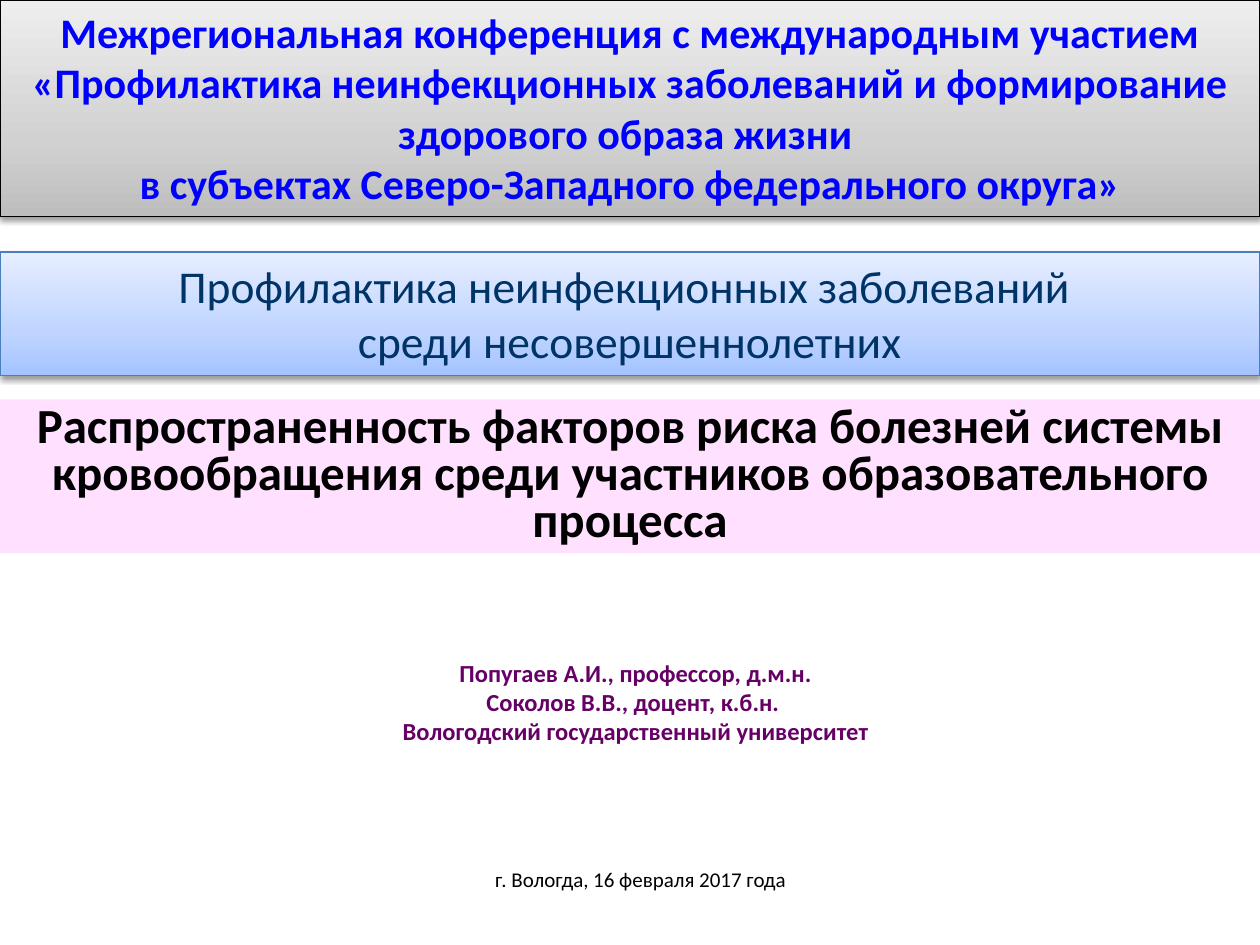
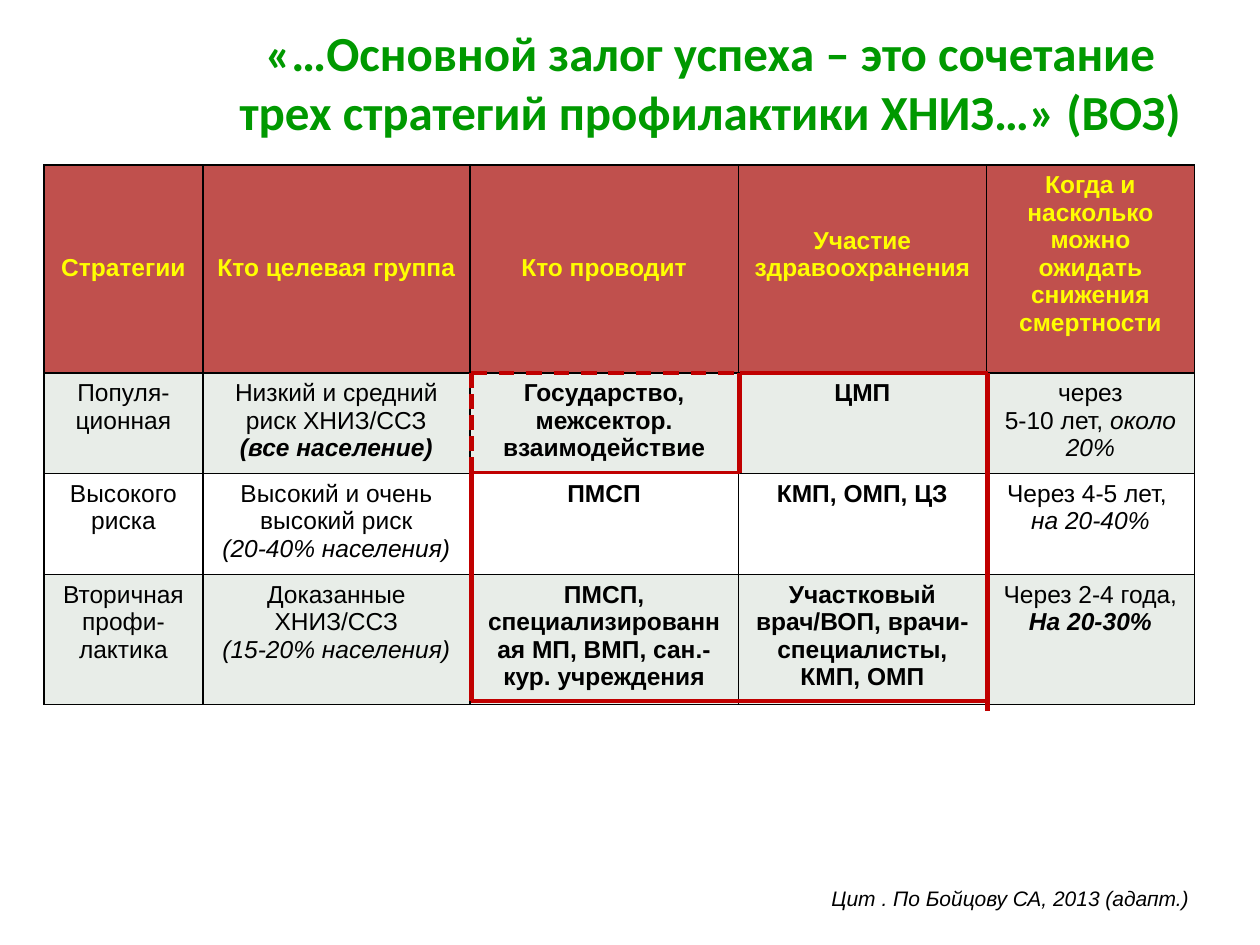
from dataclasses import dataclass
from pptx import Presentation
from pptx.dml.color import RGBColor
from pptx.enum.dml import MSO_LINE
from pptx.enum.shapes import MSO_CONNECTOR, MSO_SHAPE
from pptx.enum.text import MSO_ANCHOR, MSO_AUTO_SIZE, PP_ALIGN
from pptx.oxml import parse_xml
from pptx.oxml.ns import nsdecls, qn
from pptx.util import Inches, Pt

LEFT, CENTER = PP_ALIGN.LEFT, PP_ALIGN.CENTER
TOP, MIDDLE = MSO_ANCHOR.TOP, MSO_ANCHOR.MIDDLE
RECT, LINE = MSO_SHAPE.RECTANGLE, MSO_CONNECTOR.STRAIGHT
DASH, DOTS = MSO_LINE.DASH, MSO_LINE.SQUARE_DOT
FIXED = MSO_AUTO_SIZE.NONE


@dataclass(frozen=True)
class Font:
    size: float
    color: str
    face: str = "Calibri"
    style: str = ""


class Theme:
    event = Font(24, "0000FF", style="b")
    topic = Font(26, "003366")
    title = Font(28, "000000", style="b")
    quote = Font(28, "009900", style="b")
    author = Font(14, "660066", style="b")
    date = Font(12, "000000")
    head = Font(14, "FFFF00", "Arial", "b")
    cell = Font(14, "000000", "Arial")
    source = Font(12, "000000", "Arial", "i")
    gray = ("BDBDBD", "D1D1D1", "EEEEEE")
    blue = ("A4C4FF", "BFD4FF", "E6EEFF")
    black, sky, pink = "000000", "4B7EBC", "FFE1FF"
    brick, red = "C0504D", "C00000"
    bands = ("E8EDE8", "FFFFFF")


BANDS = [
    ((0, 0, 10, 1.72), Theme.gray, Theme.black, Theme.event, [
        "Межрегиональная конференция с международным участием "
        "«Профилактика неинфекционных заболеваний и формирование "
        "здорового образа жизни ",
        "в субъектах Северо-Западного федерального округа»"]),
    ((0, 2, 10, 0.98), Theme.blue, Theme.sky, Theme.topic, [
        "Профилактика неинфекционных заболеваний \nсреди несовершеннолетних"]),
]
TITLE = ["Распространенность факторов риска болезней системы "
         "кровообращения среди участников образовательного процесса"]
AUTHORS = ["Попугаев А.И., профессор, д.м.н.",
           "Соколов В.В., доцент, к.б.н. ",
           "Вологодский государственный университет"]
DATE = ["г. Вологда, 16 февраля 2017 года"]

QUOTE = [" «…Основной залог успеха – это сочетание ",
         "трех стратегий профилактики ХНИЗ…» (ВОЗ)"]
SOURCE = ["Цит . По Бойцову СА, 2013 (адапт.)"]
COLS = [1.26, 2.12, 2.13, 1.97, 1.65]
ROWS = [1.65, 0.8, 0.8, 1.03]
HEAD = [("Стратегии", 3), ("Кто целевая группа", 3), ("Кто проводит", 3),
        ("Участие здравоохранения", 2),
        ("Когда и насколько можно ожидать снижения смертности", 0)]
CELLS = [
    [["Популя-ционная"],
     ["Низкий и средний риск ХНИЗ/ССЗ", [("(все население)", "bi")]],
     [[("Государство, межсектор. взаимодействие", "b")]],
     [[("ЦМП", "b")]],
     ["через", [("5-10 лет, ", ""), ("около 20%", "i")]]],
    [["Высокого риска"],
     ["Высокий и очень высокий риск", [("(20-40% населения)", "i")]],
     [[("ПМСП", "b")]],
     [[("КМП, ОМП, ЦЗ", "b")]],
     ["Через 4-5 лет, ", [("на 20-40%", "i")]]],
    [["Вторичная профи-", "лактика"],
     ["Доказанные ХНИЗ/ССЗ", [("(15-20% населения)", "i")]],
     [[("ПМСП, специализированная МП, ВМП, сан.-кур. учреждения", "b")]],
     [[("Участковый врач/ВОП, врачи-специалисты, КМП, ОМП", "b")]],
     ["Через 2-4 года,", [("На 20-30%", "bi")]]],
]
X1, X2, X3 = 3.74, 5.87, 7.84
Y1, Y2, Y3, END = 2.96, 3.75, 5.56, 5.64
FRAME = [
    (X1, Y3, X1, Y2, 3, None),
    (X3, END, X3, Y1, 3, None),
    (X1, Y3, X3, Y3, 2.25, None),
    (X2, Y1, X3, Y1, 2.25, None),
    (X1, Y2, X2, Y2, 2.25, None),
    (X1, Y1, X2, Y1, 2.25, DASH),
    (X1, Y2, X1, Y1, 3, DOTS),
    (X2, Y2, X2, Y1, 3, None),
]


def rgb(code):
    return RGBColor.from_string(code)


def write(frame, paras, font, align=CENTER, space=None):
    for n, para in enumerate(paras):
        p = frame.add_paragraph() if n else frame.paragraphs[0]
        p.alignment = align
        if space:
            p.line_spacing = space
        runs = [(para, font.style)] if isinstance(para, str) else para
        for text, style in runs:
            for k, part in enumerate(text.split("\n")):
                if k:
                    p.add_line_break()
                run = p.add_run()
                run.text = part
                f = run.font
                f.name, f.size = font.face, Pt(font.size)
                f.bold, f.italic = "b" in style, "i" in style
                f.color.rgb = rgb(font.color)


def setup(frame, anchor=TOP, wrap=True):
    frame.auto_size = FIXED
    frame.word_wrap = wrap
    frame.vertical_anchor = anchor


def label(slide, box, paras, font, align=CENTER, wrap=True):
    frame = slide.shapes.add_textbox(*map(Inches, box)).text_frame
    setup(frame, wrap=wrap)
    write(frame, paras, font, align)


def title(slide, box, paras, font, anchor=TOP, space=None):
    shape = slide.shapes.title
    shape.left, shape.top, shape.width, shape.height = map(Inches, box)
    setup(shape.text_frame, anchor)
    write(shape.text_frame, paras, font, space=space)
    return shape


def band(slide, box, stops, edge, font, paras):
    shape = slide.shapes.add_shape(RECT, *map(Inches, box))
    shape.line.color.rgb = rgb(edge)
    shape.line.width = Pt(0.75)
    shape.shadow.inherit = False
    marks = "".join(
        f'<a:gs pos="{pos}"><a:srgbClr val="{code}"/></a:gs>'
        for pos, code in zip((0, 35000, 100000), stops))
    props = shape.element.spPr
    props.find(qn("a:prstGeom")).addnext(parse_xml(
        f'<a:gradFill {nsdecls("a")} rotWithShape="1"><a:gsLst>{marks}</a:gsLst>'
        '<a:lin ang="16200000" scaled="0"/></a:gradFill>'))
    props.find(qn("a:effectLst")).append(parse_xml(
        f'<a:outerShdw {nsdecls("a")} blurRad="{Pt(3.1)}" dist="{Pt(1.6)}" '
        'dir="5400000" rotWithShape="0"><a:srgbClr val="000000">'
        '<a:alpha val="38000"/></a:srgbClr></a:outerShdw>'))
    setup(shape.text_frame)
    write(shape.text_frame, paras, font)


def paint(cell, fill):
    cell.fill.solid()
    cell.fill.fore_color.rgb = rgb(fill)
    props = cell._tc.get_or_add_tcPr()
    for n, side in enumerate(("lnL", "lnR", "lnT", "lnB")):
        props.insert(n, parse_xml(
            f'<a:{side} {nsdecls("a")} w="{Pt(1)}"><a:solidFill>'
            f'<a:srgbClr val="{Theme.black}"/></a:solidFill></a:{side}>'))


def grid(slide, left, top):
    size = (sum(COLS), sum(ROWS))
    table = slide.shapes.add_table(
        len(ROWS), len(COLS), *map(Inches, (left, top, *size))).table
    table.first_row = table.horz_banding = False
    for col, width in zip(table.columns, COLS):
        col.width = Inches(width)
    for row, height in zip(table.rows, ROWS):
        row.height = Inches(height)
    for c, (text, drop) in enumerate(HEAD):
        cell = table.cell(0, c)
        cell.margin_top = Inches(0.05 + 0.22 * drop)
        write(cell.text_frame, [text], Theme.head)
        paint(cell, Theme.brick)
    for r, row in enumerate(CELLS):
        for c, paras in enumerate(row):
            cell = table.cell(r + 1, c)
            write(cell.text_frame, paras, Theme.cell)
            paint(cell, Theme.bands[r % 2])


def rule(slide, x1, y1, x2, y2, width, dash):
    line = slide.shapes.add_connector(LINE, *map(Inches, (x1, y1, x2, y2)))
    line.line.color.rgb = rgb(Theme.red)
    line.line.width = Pt(width)
    if dash:
        line.line.dash_style = dash
    line.element.spPr.append(parse_xml(f'<a:effectLst {nsdecls("a")}/>'))


def cover(slide):
    for item in BANDS:
        band(slide, *item)
    head = title(slide, (0, 3.17, 10, 1.22), TITLE, Theme.title, space=0.8)
    head.fill.solid()
    head.fill.fore_color.rgb = rgb(Theme.pink)
    label(slide, (2.67, 5.17, 4.75, 0.81), AUTHORS, Theme.author)
    label(slide, (3.5, 6.83, 3.17, 0.3), DATE, Theme.date)


def plan(slide):
    head = title(slide, (1.46, 0, 8.35, 1.17), QUOTE, Theme.quote, MIDDLE)
    head.text_frame.margin_top = Inches(0.17)
    grid(slide, 0.35, 1.31)
    label(slide, (6.5, 6.98, 3.16, 0.3), SOURCE, Theme.source, LEFT, False)
    for item in FRAME:
        rule(slide, *item)


def main():
    deck = Presentation()
    deck.slide_width, deck.slide_height = Inches(10), Inches(7.5)
    for draw in (cover, plan):
        draw(deck.slides.add_slide(deck.slide_layouts[5]))
    deck.save("out.pptx")


if __name__ == "__main__":
    main()
